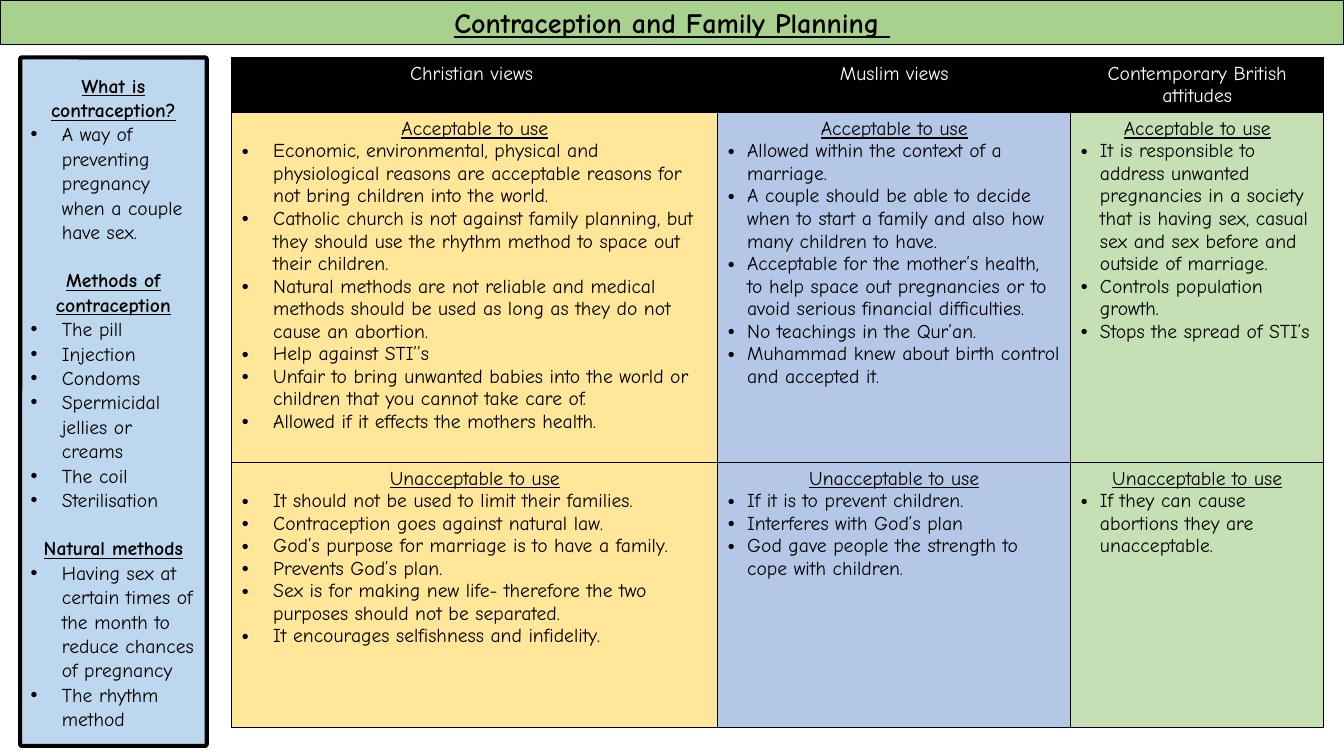
from lxml.etree import SubElement
from pptx import Presentation
from pptx.dml.color import RGBColor
from pptx.enum.shapes import MSO_SHAPE as Shape
from pptx.enum.text import MSO_ANCHOR as Anchor, MSO_AUTO_SIZE as AutoSize, PP_ALIGN as Align
from pptx.oxml.ns import qn
from pptx.util import Inches, Pt

COLORS = {
    "black": "000000", "white": "FFFFFF", "title": "A9D18E", "sidebar": "BDD7EE",
    "christian": "FFE699", "muslim": "B4C7E7", "british": "C5E0B4",
}

SIDEBAR = [
    ("What is contraception?", ["A way of preventing pregnancy when a couple have sex."]),
    ("Methods of contraception", [
        "The pill", "Injection", "Condoms", "Spermicidal jellies or creams",
        "The coil", "Sterilisation"]),
    ("Natural methods", [
        "Having sex at certain times of the month to reduce chances of pregnancy",
        "The rhythm method"]),
]

# Each view: heading, colour, column width, bullet indent, acceptable, unacceptable
VIEWS = [
    ("Christian views ", "christian", 4.82, 0.31, [
        "Economic, environmental, physical and physiological reasons are acceptable "
        "reasons for not bring children into the world.",
        "Catholic church is not against family planning, but they should use the rhythm "
        "method to space out their children.",
        "Natural methods are not reliable and medical methods should be used as long as "
        "they do not cause an abortion.",
        "Help against STI’’s",
        "Unfair to bring unwanted babies into the world or children that you cannot take care of.",
        "Allowed if it effects the mothers health.",
    ], [
        "It should not be used to limit their families.",
        "Contraception goes against natural law.",
        "God’s purpose for marriage is to have a family.",
        "Prevents God’s plan.",
        "Sex is for making new life- therefore the two purposes should not be separated.",
        "It encourages selfishness and infidelity.",
    ]),
    ("Muslim views", "muslim", 3.5, 0.19, [
        "Allowed within the context of a marriage.",
        "A couple should be able to decide when to start a family and also how many "
        "children to have.",
        "Acceptable for the mother’s health, to help space out pregnancies or to avoid "
        "serious financial difficulties.",
        "No teachings in the Qur’an.",
        "Muhammad knew about birth control and accepted it.",
    ], [
        "If it is to prevent children.",
        "Interferes with God’s plan",
        "God gave people the strength to cope with children.",
    ]),
    ("Contemporary British attitudes", "british", 2.51, 0.19, [
        "It is responsible to address unwanted pregnancies in a society that is having "
        "sex, casual sex and sex before and outside of marriage.",
        "Controls population growth.",
        "Stops the spread of STI’s",
    ], ["If they can cause abortions they are unacceptable."]),
]
ROW_HEIGHTS = [0.53, 3.47, 2.63]


class SlideBuilder:
    font = "Comic Neue"
    size = 14

    def __init__(self, slide):
        self.slide = slide

    def color(self, name):
        return RGBColor.from_string(COLORS[name])

    def paint(self, shape, fill, line_width):
        shape.fill.solid()
        shape.fill.fore_color.rgb = self.color(fill)
        shape.line.color.rgb = self.color("black")
        shape.line.width = Pt(line_width)

    def paragraph(self, frame, first, text, color="black", size=None, bold=False,
                  underline=False, indent=None):
        paragraph = frame.paragraphs[0] if first else frame.add_paragraph()
        paragraph.alignment = Align.LEFT if indent else Align.CENTER
        run = paragraph.add_run()
        run.text = text
        font = run.font
        font.name, font.size = self.font, Pt(size or self.size)
        font.bold, font.underline = bold, underline
        font.color.rgb = self.color(color)
        if indent:
            properties = paragraph._p.get_or_add_pPr()
            properties.set("marL", str(Inches(indent)))
            properties.set("indent", str(-Inches(indent)))
            SubElement(properties, qn("a:buFont"), typeface="Arial")
            SubElement(properties, qn("a:buChar"), char="•")
        return paragraph

    def title(self, text):
        title = self.slide.shapes.title
        title.left, title.top = Inches(0), Inches(0)
        title.width, title.height = Inches(13.33), Inches(0.44)
        self.paint(title, "title", 0.75)
        frame = title.text_frame
        frame.auto_size = AutoSize.NONE
        frame.vertical_anchor = Anchor.MIDDLE
        self.paragraph(frame, True, text, size=20, bold=True, underline=True)

    def sidebar(self, sections, left, top, width, height):
        panel = self.slide.shapes.add_shape(
            Shape.ROUNDED_RECTANGLE, Inches(left), Inches(top), Inches(width), Inches(height))
        panel.adjustments[0] = 0.01
        panel.shadow.inherit = False
        self.paint(panel, "sidebar", 3)
        frame = panel.text_frame
        frame.word_wrap = True
        frame.vertical_anchor = Anchor.MIDDLE
        for index, (heading, items) in enumerate(sections):
            paragraph = self.paragraph(frame, index == 0, heading, bold=True, underline=True)
            if index:
                paragraph.space_before = Pt(16.8)
            for item in items:
                self.paragraph(frame, False, item, indent=0.31)
        for paragraph in frame.paragraphs:
            paragraph.line_spacing = 1.04

    def cell(self, cell, fill):
        properties = cell._tc.get_or_add_tcPr()
        for side in ("lnL", "lnR", "lnT", "lnB"):
            line = SubElement(properties, qn(f"a:{side}"), w=str(Pt(1)))
            SubElement(SubElement(line, qn("a:solidFill")), qn("a:srgbClr"), val=COLORS["black"])
        cell.fill.solid()
        cell.fill.fore_color.rgb = self.color(fill)
        return cell.text_frame

    def table(self, views, left, top):
        widths = [view[2] for view in views]
        table = self.slide.shapes.add_table(
            len(ROW_HEIGHTS), len(views), Inches(left), Inches(top),
            Inches(sum(widths)), Inches(sum(ROW_HEIGHTS))).table
        for row, height in zip(table.rows, ROW_HEIGHTS):
            row.height = Inches(height)
        for column, (heading, fill, width, indent, acceptable, unacceptable) in enumerate(views):
            table.columns[column].width = Inches(width)
            frame = self.cell(table.cell(0, column), "black")
            self.paragraph(frame, True, heading, color="white")
            groups = [("Acceptable to use", acceptable), ("Unacceptable to use", unacceptable)]
            for row, (subheading, items) in enumerate(groups, 1):
                frame = self.cell(table.cell(row, column), fill)
                self.paragraph(frame, True, subheading, underline=True)
                for item in items:
                    self.paragraph(frame, False, item, indent=indent)


def main():
    presentation = Presentation()
    presentation.slide_width = Inches(13.33)
    presentation.slide_height = Inches(7.5)
    title_only = presentation.slide_layouts[5]
    builder = SlideBuilder(presentation.slides.add_slide(title_only))

    # Title band
    builder.title("Contraception and Family Planning ")
    # Comparison of views
    builder.table(VIEWS, 2.3, 0.57)
    # Key facts
    builder.sidebar(SIDEBAR, 0.2, 0.57, 1.85, 6.83)

    presentation.save("out.pptx")


if __name__ == "__main__":
    main()
